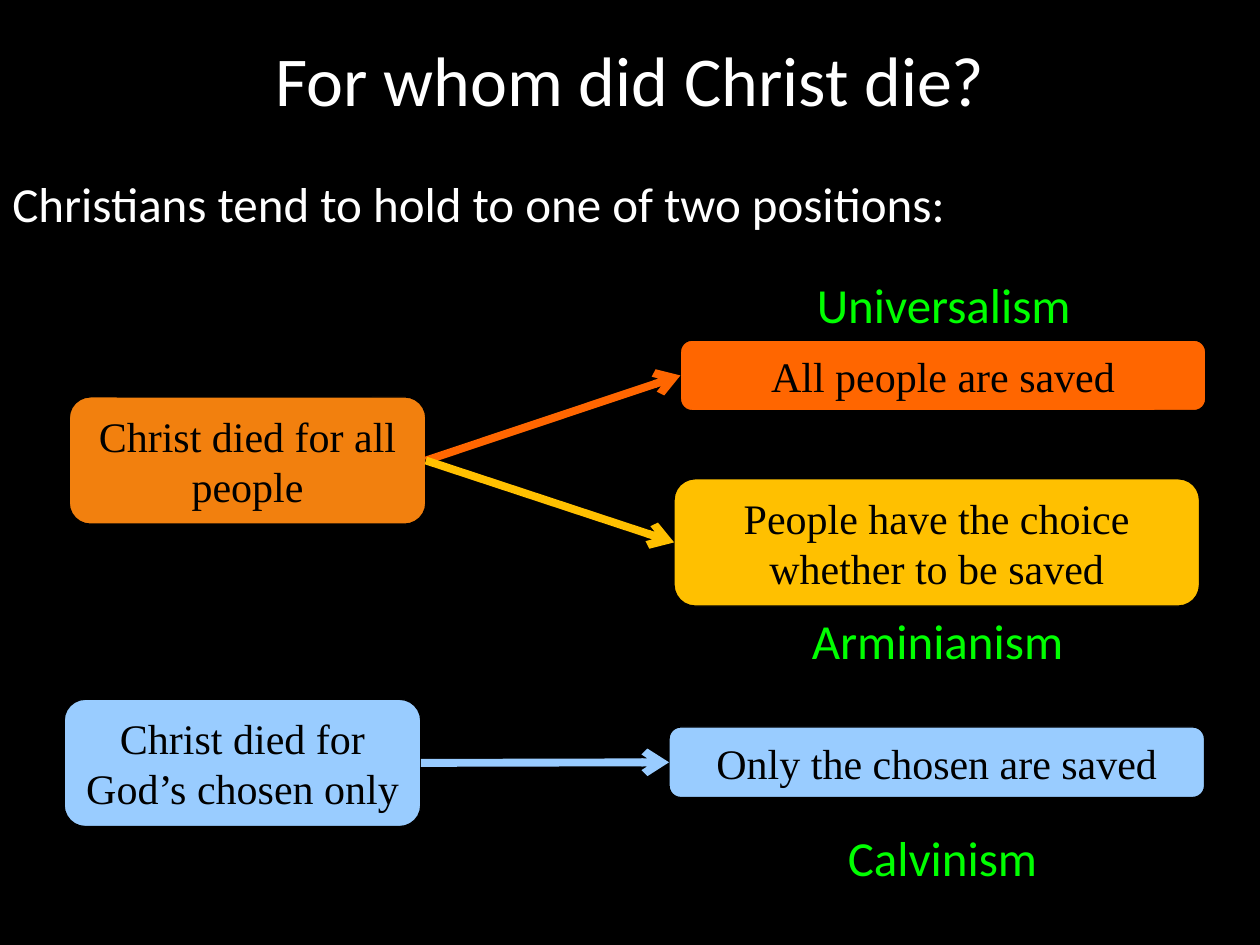
from dataclasses import dataclass

from lxml.etree import SubElement
from pptx import Presentation
from pptx.dml.color import RGBColor as Color
from pptx.enum.shapes import MSO_CONNECTOR as Connector, MSO_SHAPE as Shape
from pptx.enum.text import MSO_ANCHOR as Anchor, MSO_AUTO_SIZE as AutoSize, PP_ALIGN as Align
from pptx.oxml.ns import qn
from pptx.util import Inches, Pt

RIGHT_SITE, LEFT_SITE = 3, 1


@dataclass(frozen=True)
class Theme:
    background: str = "000000"
    light: str = "FFFFFF"
    dark: str = "000000"
    label: str = "00FF00"
    all_people: str = "F2800E"
    universal: str = "FF6600"
    choice: str = "FFC000"
    chosen: str = "99CCFF"
    sans: str = "Calibri"
    serif: str = "Times New Roman"
    title_size: int = 40
    text_size: int = 28
    box_size: int = 24
    outline: float = 0.75
    arrow: float = 4.5


class SlideBuilder:
    """Draws styled elements on one slide."""

    def __init__(self, slide, theme):
        self.slide = slide
        self.theme = theme
        fill = slide.background.fill
        fill.solid()
        fill.fore_color.rgb = Color.from_string(theme.background)

    def add_text(self, shape, text, size, font, color, align=Align.CENTER):
        paragraph = shape.text_frame.paragraphs[0]
        paragraph.alignment = align
        run = paragraph.add_run()
        run.text = text
        run.font.size = Pt(size)
        run.font.name = font
        run.font.color.rgb = Color.from_string(color)

    def title(self, text, left, top, width, height):
        shape = self.slide.shapes.title
        shape.left, shape.top = Inches(left), Inches(top)
        shape.width, shape.height = Inches(width), Inches(height)
        shape.text_frame.vertical_anchor = Anchor.MIDDLE
        self.add_text(shape, text, self.theme.title_size, self.theme.sans, self.theme.light)

    def text(self, text, left, top, width, height, color, align=Align.CENTER, wrap=False):
        shape = self.slide.shapes.add_textbox(
            Inches(left), Inches(top), Inches(width), Inches(height))
        shape.text_frame.word_wrap = wrap
        shape.text_frame.auto_size = AutoSize.NONE if wrap else AutoSize.SHAPE_TO_FIT_TEXT
        self.add_text(shape, text, self.theme.text_size, self.theme.sans, color, align)

    def box(self, text, left, top, width, height, color):
        shape = self.slide.shapes.add_shape(
            Shape.ROUNDED_RECTANGLE, Inches(left), Inches(top), Inches(width), Inches(height))
        shape.shadow.inherit = False
        shape.fill.solid()
        shape.fill.fore_color.rgb = Color.from_string(color)
        shape.line.color.rgb = Color.from_string(self.theme.dark)
        shape.line.width = Pt(self.theme.outline)
        frame = shape.text_frame
        frame.word_wrap = True
        frame.auto_size = AutoSize.SHAPE_TO_FIT_TEXT
        frame.vertical_anchor = Anchor.MIDDLE
        self.add_text(shape, text, self.theme.box_size, self.theme.serif, self.theme.dark)
        return shape

    def arrow(self, source, target, color):
        connector = self.slide.shapes.add_connector(Connector.STRAIGHT, 0, 0, 0, 0)
        connector.begin_connect(source, RIGHT_SITE)
        connector.end_connect(target, LEFT_SITE)
        connector.line.color.rgb = Color.from_string(color)
        connector.line.width = Pt(self.theme.arrow)
        properties = connector.line._get_or_add_ln()
        SubElement(properties, qn("a:tailEnd"), type="arrow")
        SubElement(connector._element.spPr, qn("a:effectLst"))


def main():
    theme = Theme()
    presentation = Presentation()
    presentation.slide_width, presentation.slide_height = Inches(10), Inches(7.5)
    slide = presentation.slides.add_slide(presentation.slide_layouts[5])
    builder = SlideBuilder(slide, theme)

    builder.title("For whom did Christ die?", 0, 0, 10, 1.25)
    builder.text("Christians tend to hold to one of two positions:", 0, 1.33, 10, 6.17,
                 theme.light, Align.LEFT, wrap=True)

    one_line, two_lines = 0.56, 1.01
    all_people = builder.box("Christ died for all people",
                             0.55, 3.15, 2.83, two_lines, theme.all_people)
    chosen_only = builder.box("Christ died for God’s chosen only",
                              0.51, 5.55, 2.83, two_lines, theme.chosen)
    all_saved = builder.box("All people are saved", 5.4, 2.7, 4.17, one_line, theme.universal)
    free_choice = builder.box("People have the choice whether to be saved",
                              5.35, 3.8, 4.17, two_lines, theme.choice)
    chosen_saved = builder.box("Only the chosen are saved",
                               5.31, 5.77, 4.25, one_line, theme.chosen)

    for source, target, color in (
        (all_people, all_saved, theme.universal),
        (all_people, free_choice, theme.choice),
        (chosen_only, chosen_saved, theme.chosen),
    ):
        builder.arrow(source, target, color)

    for name, left, top, width in (
        ("Universalism", 6.37, 2.13, 2.24),
        ("Arminianism", 6.33, 4.8, 2.22),
        ("Calvinism", 6.62, 6.52, 1.72),
    ):
        builder.text(name, left, top, width, 0.57, theme.label)

    presentation.save("out.pptx")


if __name__ == "__main__":
    main()
